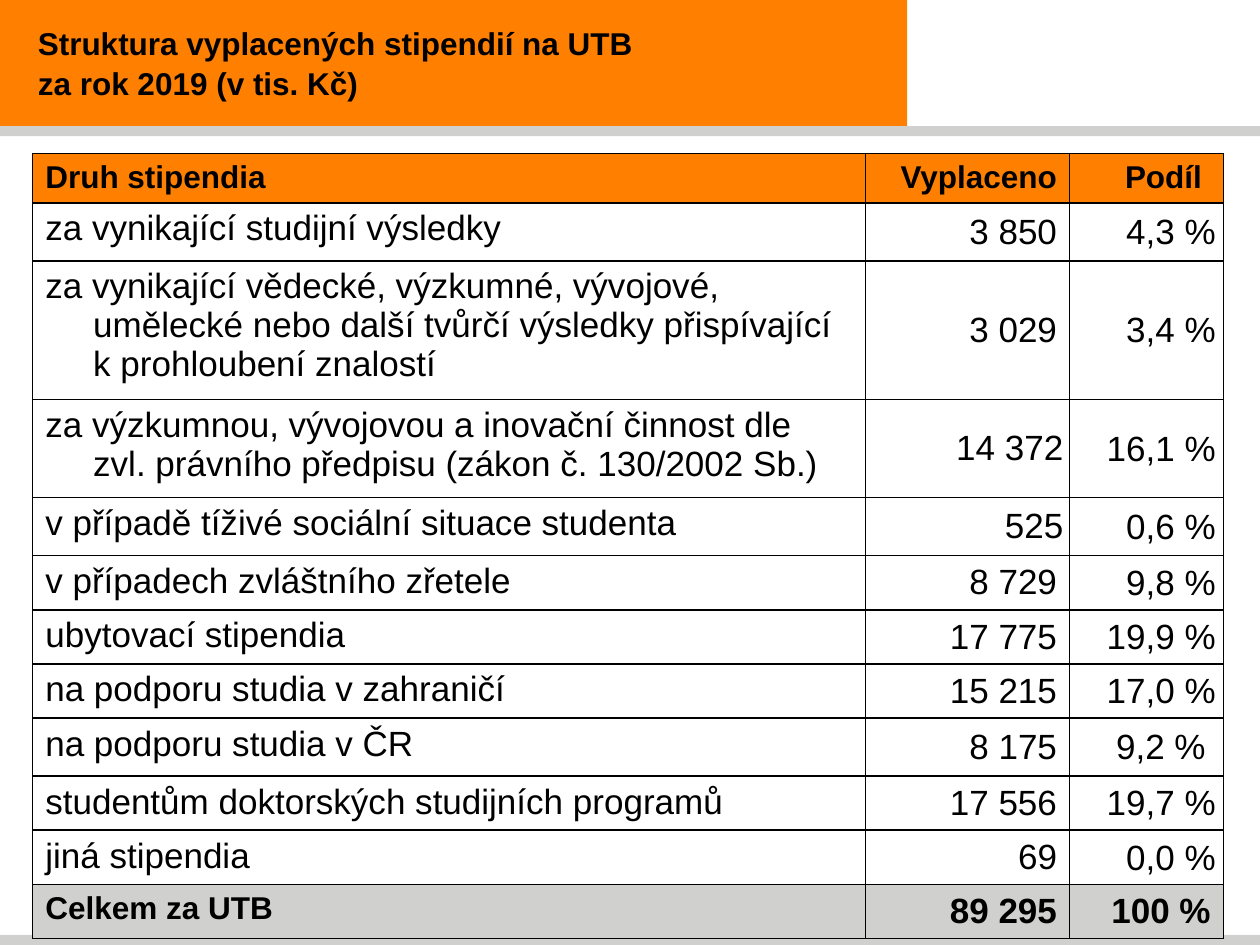
from lxml.etree import SubElement
from pptx import Presentation
from pptx.dml.color import RGBColor
from pptx.enum.shapes import MSO_SHAPE as Shape
from pptx.enum.text import MSO_ANCHOR as Anchor, MSO_AUTO_SIZE as AutoSize, PP_ALIGN as Align
from pptx.oxml.ns import qn
from pptx.util import Inches, Pt

ORANGE, GREY, BLACK = "FF8001", "D0D0CE", "000000"
COLUMNS = [6.61, 1.62, 1.22]
HEIGHTS = [0.39, 0.46, 1.1, 0.78, 0.46, 0.43, 0.43, 0.43, 0.46, 0.43, 0.43, 0.43]
ROWS = [
    ("Druh stipendia", "Vyplaceno", "Podíl"),
    ("za vynikající studijní výsledky", "3 850", "4,3 %"),
    ("za vynikající vědecké, výzkumné, vývojové, umělecké nebo další tvůrčí "
     "výsledky přispívající k prohloubení znalostí", "3 029", "3,4 %"),
    ("za výzkumnou, vývojovou a inovační činnost dle zvl. právního předpisu "
     "(zákon č. 130/2002 Sb.)", "14 372", "16,1 %"),
    ("v případě tíživé sociální situace studenta", "525", "0,6 %"),
    ("v případech zvláštního zřetele", "8 729", "9,8 %"),
    ("ubytovací stipendia", "17 775", "19,9 %"),
    ("na podporu studia v zahraničí", "15 215", "17,0 %"),
    ("na podporu studia v ČR", "8 175", "9,2 %"),
    ("studentům doktorských studijních programů", "17 556", "19,7 %"),
    ("jiná stipendia", "69", "0,0 %"),
    ("Celkem za UTB", "89 295", "100 %"),
]
LAST = len(ROWS) - 1
RIGHT_MARGINS = {(0, 2): 0.17, (3, 1): 0.05, (4, 1): 0.05, (8, 2): 0.14, (LAST, 2): 0.1}


def color(value):
    return RGBColor.from_string(value)


def apply(target, values):
    for name, value in values.items():
        setattr(target, name, value)


class SlideBuilder:
    font = "Arial"

    def __init__(self, deck):
        self.page = deck.slides.add_slide(deck.slide_layouts[5])

    def add_text(self, para, text, size, bold=False, align=Align.LEFT, left=0, indent=0):
        span = para.add_run()
        span.text = text
        apply(span.font, {"name": self.font, "size": Pt(size), "bold": bold})
        span.font.color.rgb = color(BLACK)
        para.alignment = align
        props = para._p.get_or_add_pPr()
        props.set("marL", str(Inches(left)))
        props.set("indent", str(Inches(indent)))

    def band(self, left, top, width, height, fill):
        box = self.page.shapes.add_shape(
            Shape.RECTANGLE, *map(Inches, (left, top, width, height)))
        box.shadow.inherit = False
        box.fill.solid()
        box.fill.fore_color.rgb = color(fill)
        box.line.fill.background()
        self.page.shapes.title.element.addprevious(box.element)

    def title(self, lines, left, top, width, height):
        box = self.page.shapes.title
        apply(box, {"left": Inches(left), "top": Inches(top),
                    "width": Inches(width), "height": Inches(height)})
        frame = box.text_frame
        apply(frame, {"word_wrap": True, "auto_size": AutoSize.NONE,
                      "vertical_anchor": Anchor.MIDDLE})
        for index, line in enumerate(lines):
            para = frame.add_paragraph() if index else frame.paragraphs[0]
            apply(para, {"space_before": Pt(index), "line_spacing": 1.0})
            self.add_text(para, line, 18, bold=True, left=0.2)

    def border(self, cell):
        props = cell._tc.get_or_add_tcPr()
        for side in ("lnL", "lnR", "lnT", "lnB"):
            line = SubElement(props, qn(f"a:{side}"), w=str(Pt(1)))
            fill = SubElement(line, qn("a:solidFill"))
            SubElement(fill, qn("a:srgbClr"), val=BLACK)

    def cell(self, cell, row, column, text):
        edge = row in (0, LAST)
        plain_share = column == 2 and not edge
        right = RIGHT_MARGINS.get((row, column), 0.06 if plain_share else 0.1)
        vertical = 0 if plain_share or right == 0.05 else 0.05
        apply(cell, {
            "margin_left": Inches(0.01 if plain_share else 0.1),
            "margin_right": Inches(right),
            "margin_top": Inches(0.01 if plain_share else vertical),
            "margin_bottom": Inches(vertical),
            "vertical_anchor": Anchor.MIDDLE if row and column else Anchor.TOP,
        })
        self.border(cell)
        if edge:
            cell.fill.solid()
            cell.fill.fore_color.rgb = color(GREY if row else ORANGE)
        else:
            cell.fill.background()
        size = 18 if row == 0 or (row == LAST and column == 0) else 20
        layout = {"align": Align.RIGHT} if column else {"left": 0.38, "indent": -0.38}
        self.add_text(cell.text_frame.paragraphs[0], text, size, edge, **layout)

    def table(self, left, top):
        frame = self.page.shapes.add_table(
            len(ROWS), len(COLUMNS), Inches(left), Inches(top),
            Inches(sum(COLUMNS)), Inches(sum(HEIGHTS)))
        table = frame.table
        apply(table, {"first_row": False, "horz_banding": False})
        for column, width in zip(table.columns, COLUMNS):
            column.width = Inches(width)
        for index, (height, texts) in enumerate(zip(HEIGHTS, ROWS)):
            table.rows[index].height = Inches(height)
            for column, text in enumerate(texts):
                self.cell(table.cell(index, column), index, column, text)


def main():
    deck = Presentation()
    apply(deck, {"slide_width": Inches(10), "slide_height": Inches(7.5)})
    builder = SlideBuilder(deck)
    builder.band(0, 0, 7.2, 1, ORANGE)
    for top in (7.42, 1):
        builder.band(0, top, 10, 0.08, GREY)
    builder.title(["Struktura vyplacených stipendií na UTB",
                   "za rok 2019 (v tis. Kč)"], 0, 0, 7.2, 1)
    builder.table(0.26, 1.22)
    deck.save("out.pptx")


if __name__ == "__main__":
    main()
